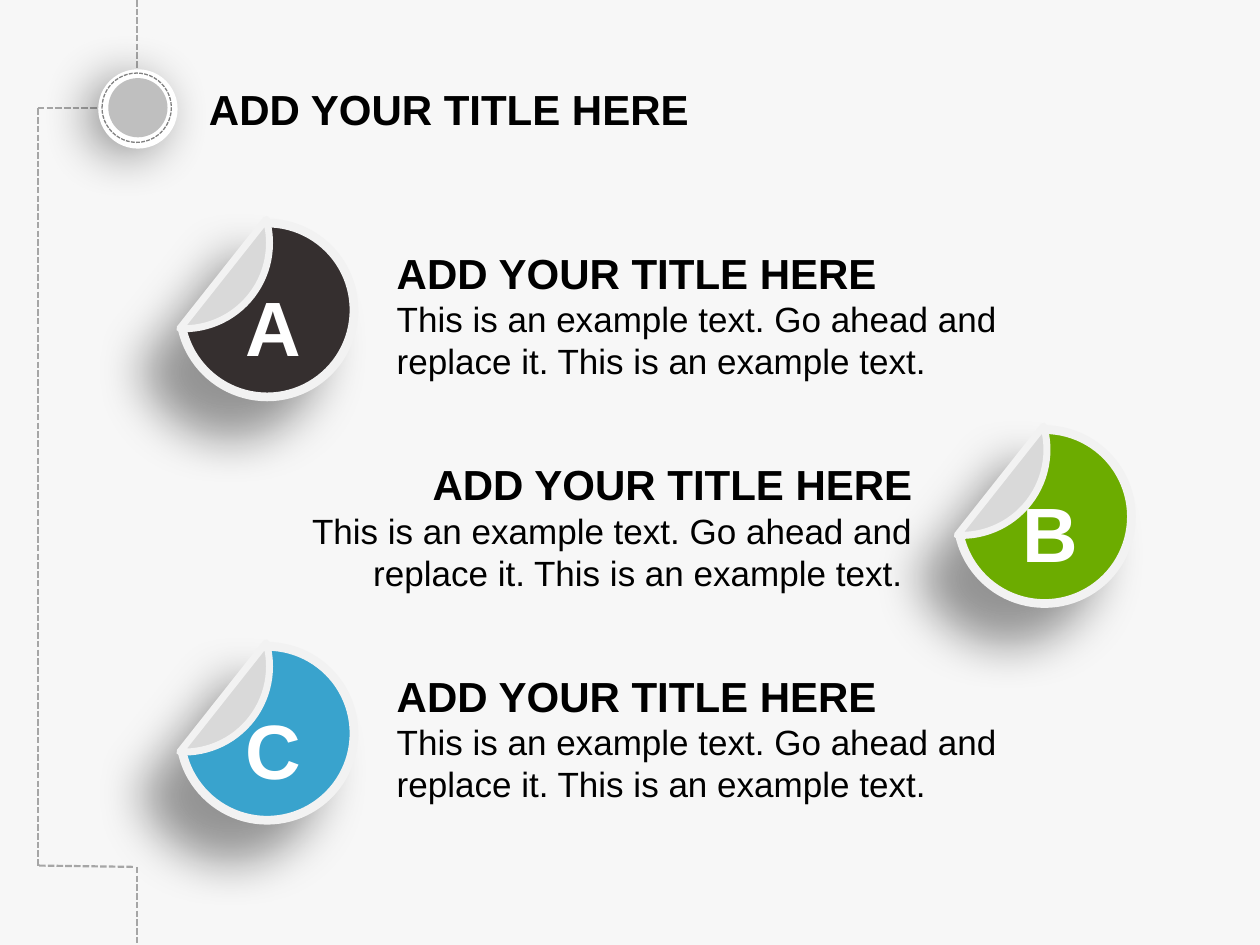
from dataclasses import dataclass

from lxml import etree
from pptx import Presentation
from pptx import util as u
from pptx.dml.color import RGBColor
from pptx.enum import dml, shapes, text
from pptx.oxml import ns

FONT = "Arial"
BACKGROUND = RGBColor(0xF7, 0xF7, 0xF7)
BLACK = RGBColor(0x00, 0x00, 0x00)
WHITE = RGBColor(0xFF, 0xFF, 0xFF)
TRACK = RGBColor(0xA6, 0xA6, 0xA6)
STITCH = RGBColor(0x80, 0x80, 0x80)
BADGE = RGBColor(0xBF, 0xBF, 0xBF)
EDGE = RGBColor(0xF2, 0xF2, 0xF2)
PEEL = RGBColor(0xD9, 0xD9, 0xD9)
CHARCOAL = RGBColor(0x35, 0x2F, 0x2F)
GREEN = RGBColor(0x6C, 0xAC, 0x00)
BLUE = RGBColor(0x39, 0xA3, 0xCD)

TITLE = "ADD YOUR TITLE HERE"
BODY = "This is an example text. Go ahead and replace it. This is an example text."
DASH = dml.MSO_LINE.SQUARE_DOT
ELLIPSE = shapes.MSO_SHAPE.OVAL
CHORD = shapes.MSO_SHAPE.CHORD
LEFT, RIGHT = text.PP_ALIGN.LEFT, text.PP_ALIGN.RIGHT


@dataclass
class Item:
    letter: str
    color: RGBColor
    x: float
    y: float
    text_x: float
    text_y: float
    body: str = BODY
    align: text.PP_ALIGN = LEFT


ITEMS = [
    Item("A", CHARCOAL, 1.43, 1.77, 3.05, 1.95),
    Item("B", GREEN, 7.6, 3.41, 2.03, 3.63, BODY + " ", RIGHT),
    Item("C", BLUE, 1.43, 5.13, 3.05, 5.31),
]

# Start and end points of the dashed track
TRACK_LINES = [
    (0.3, 0.86, 1.13, 0.86),
    (1.09, 0, 1.09, 0.83),
    (0.3, 0.86, 0.3, 6.88),
    (0.31, 6.87, 1.06, 6.88),
    (1.09, 6.88, 1.09, 7.55),
]


def add_track_line(s, x1: float, y1: float, x2: float, y2: float) -> None:
    line = s.shapes.add_connector(
        shapes.MSO_CONNECTOR.STRAIGHT,
        u.Inches(x1), u.Inches(y1), u.Inches(x2), u.Inches(y2))
    line.line.color.rgb = TRACK
    line.line.width = u.Pt(1.25)
    line.line.dash_style = DASH
    etree.SubElement(line._element.spPr, ns.qn("a:effectLst"))


def add_round(group, kind, x: float, y: float, size: float, fill=None,
              line=None, width: float = 0, angles=()):
    """Add a circle or a chord; angles are in degrees."""
    sp = group.shapes.add_shape(
        kind, u.Inches(x), u.Inches(y), u.Inches(size), u.Inches(size))
    for i, angle in enumerate(angles):
        sp.adjustments[i] = angle * 0.6
    if fill is None:
        sp.fill.background()
    else:
        sp.fill.solid()
        sp.fill.fore_color.rgb = fill
    if line is None:
        sp.line.fill.background()
    else:
        sp.line.color.rgb = line
        sp.line.width = u.Pt(width)
    sp.shadow.inherit = False
    return sp


def add_shadow(sp, distance: float, direction: int) -> None:
    effects = sp._element.spPr.find(ns.qn("a:effectLst"))
    shadow = etree.SubElement(
        effects, ns.qn("a:outerShdw"), blurRad=str(u.Pt(28)),
        dist=str(u.Pt(distance)), dir=str(direction * 60000),
        algn="ctr", rotWithShape="0")
    color = etree.SubElement(shadow, ns.qn("a:srgbClr"), val=str(BLACK))
    etree.SubElement(color, ns.qn("a:alpha"), val="40000")


def add_run(p, words: str, size: int, bold: bool, color=BLACK) -> None:
    r = p.add_run()
    r.text = words
    r.font.name = FONT
    r.font.size = u.Pt(size)
    r.font.bold = bold
    r.font.color.rgb = color


def add_text(s, x: float, y: float, w: float, h: float, body: str = "",
             align=LEFT) -> None:
    box = s.shapes.add_textbox(u.Inches(x), u.Inches(y), u.Inches(w), u.Inches(h))
    tf = box.text_frame
    tf.word_wrap = True
    tf.vertical_anchor = text.MSO_ANCHOR.MIDDLE
    p = tf.paragraphs[0]
    p.alignment = align
    add_run(p, TITLE, 24, True)
    if body:
        p = tf.add_paragraph()
        p.alignment = align
        add_run(p, body, 20, False)


def add_badge(s) -> None:
    group = s.shapes.add_group_shape()
    disc = add_round(group, ELLIPSE, 0.78, 0.55, 0.63, WHITE)
    add_shadow(disc, 8, 150)
    add_round(group, ELLIPSE, 0.86, 0.62, 0.47, BADGE)
    ring = add_round(group, ELLIPSE, 0.81, 0.58, 0.55, line=STITCH, width=0.75)
    ring.line.dash_style = DASH


def add_sticker(s, item: Item) -> None:
    group = s.shapes.add_group_shape()
    sp = add_round(group, CHORD, item.x, item.y, 1.38, item.color, EDGE, 5,
                   (269.88, 167.58))
    add_shadow(sp, 30, 135)
    tf = sp.text_frame
    tf.word_wrap = True
    tf.vertical_anchor = text.MSO_ANCHOR.BOTTOM
    tf.margin_left, tf.margin_top = u.Inches(0.1), u.Inches(0.05)
    tf.margin_right = tf.margin_bottom = 0
    p = tf.paragraphs[0]
    p.alignment = text.PP_ALIGN.CENTER
    add_run(p, item.letter, 44, True, WHITE)
    # Peeled corner
    add_round(group, CHORD, item.x - 0.65, item.y - 0.52, 1.36, PEEL, EDGE, 4,
              (343.93, 92.78))


def main() -> None:
    prs = Presentation()
    prs.slide_width, prs.slide_height = u.Inches(10), u.Inches(7.5)
    s = prs.slides.add_slide(prs.slide_layouts[6])
    s.background.fill.solid()
    s.background.fill.fore_color.rgb = BACKGROUND

    # Dashed track, badge and heading
    for ends in TRACK_LINES:
        add_track_line(s, *ends)
    add_badge(s)
    add_text(s, 1.56, 0.51, 5.39, 0.7)

    # Stickers with their texts
    for item in ITEMS:
        add_sticker(s, item)
        add_text(s, item.text_x, item.text_y, 5.31, 1.09, item.body, item.align)

    prs.save("out.pptx")


if __name__ == "__main__":
    main()
